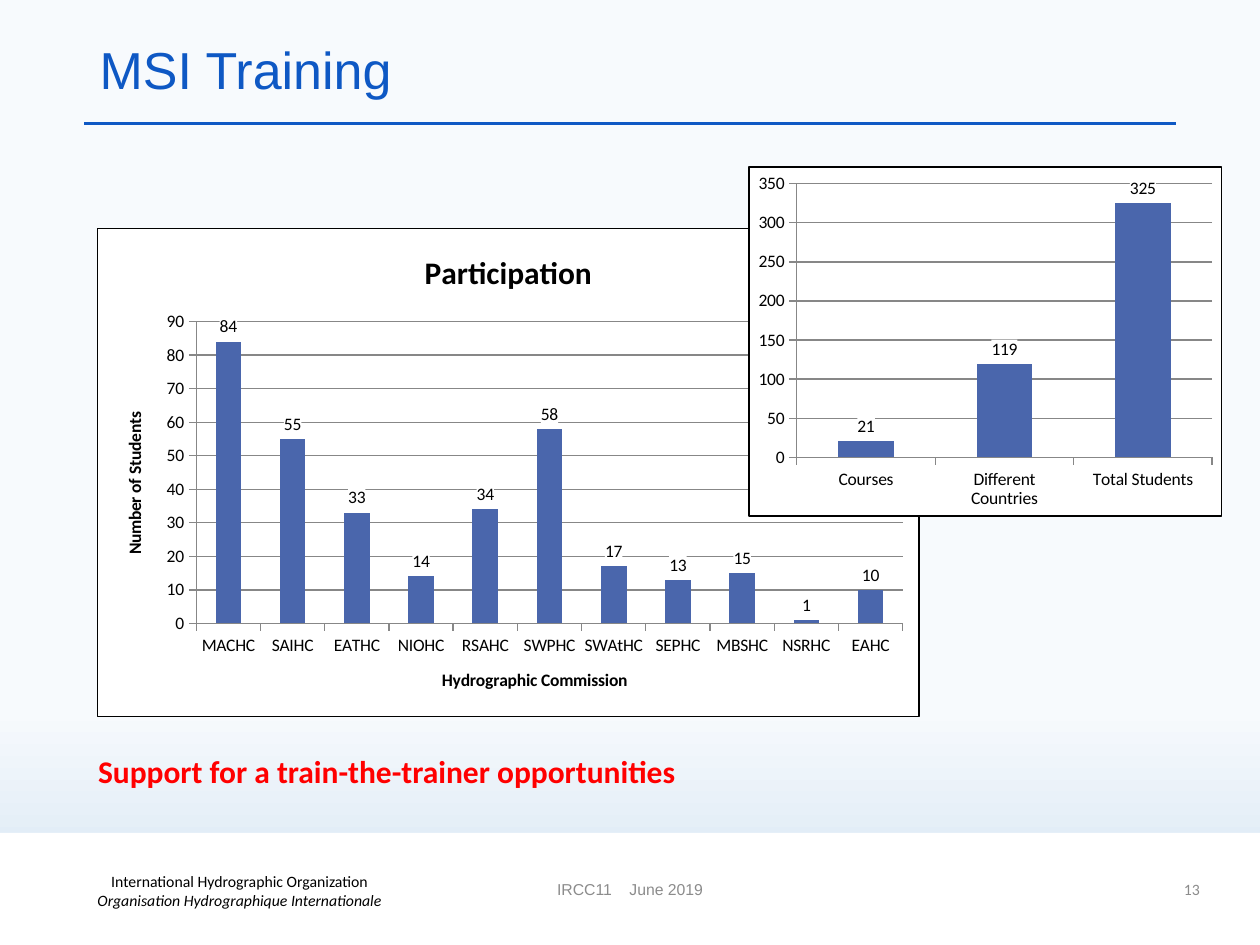
from lxml import etree
from pptx import Presentation
from pptx.chart.data import CategoryChartData
from pptx.dml.color import RGBColor
from pptx.enum.chart import XL_CHART_TYPE, XL_LABEL_POSITION, XL_TICK_MARK
from pptx.enum.shapes import MSO_CONNECTOR, MSO_SHAPE
from pptx.enum.text import MSO_ANCHOR, MSO_AUTO_SIZE, PP_ALIGN
from pptx.oxml import parse_xml
from pptx.oxml.ns import nsdecls, qn
from pptx.util import Inches, Pt

BLUE = RGBColor(0x0E, 0x58, 0xC4)
BAR = RGBColor(0x4A, 0x66, 0xAC)
RED = RGBColor(0xFF, 0x00, 0x00)
GREY = RGBColor(0x8C, 0x8C, 0x8C)
GRID = RGBColor(0x87, 0x87, 0x87)
BLACK = RGBColor(0x00, 0x00, 0x00)
WHITE = RGBColor(0xFF, 0xFF, 0xFF)
SKY_TOP = RGBColor(0xF7, 0xFA, 0xFD)
SKY_BOTTOM = RGBColor(0xD0, 0xE2, 0xF1)

# Content
TITLE = "MSI Training"
MESSAGE = "Support for a train-the-trainer opportunities"
ORGANIZATION = ("International Hydrographic Organization",
                "Organisation Hydrographique Internationale")
EVENT = "IRCC11    June 2019"
PAGE = "13"

CHARTS = [
    {"box": (0.77, 1.81, 6.53, 3.88), "title": "Participation",
     "x_title": "Hydrographic Commission", "y_title": "Number of Students",
     "max": 90, "step": 10,
     "data": {"MACHC": 84, "SAIHC": 55, "EATHC": 33, "NIOHC": 14,
              "RSAHC": 34, "SWPHC": 58, "SWAtHC": 17, "SEPHC": 13,
              "MBSHC": 15, "NSRHC": 1, "EAHC": 10}},
    {"box": (5.94, 1.32, 3.76, 2.78), "max": 350, "step": 50,
     "data": {"Courses": 21, "Different Countries": 119,
              "Total Students": 325}},
]


def set_font(font, size, color, name="Calibri", bold=False, italic=False):
    font.name, font.size = name, Pt(size)
    font.bold, font.italic = bold, italic
    font.color.rgb = color


def add_text(s, box, text, size, color, align=PP_ALIGN.LEFT,
             anchor=MSO_ANCHOR.MIDDLE, **style):
    tf = s.shapes.add_textbox(*map(Inches, box)).text_frame
    tf.word_wrap = True
    tf.vertical_anchor = anchor
    p = tf.paragraphs[0]
    p.alignment = align
    r = p.add_run()
    r.text = text
    set_font(r.font, size, color, **style)
    return p


def white_box(line):
    return parse_xml(
        f'<c:spPr {nsdecls("c", "a")}><a:solidFill><a:srgbClr val="{WHITE}"/>'
        f'</a:solidFill>{line}</c:spPr>')


def add_heading(holder, text, size):
    r = holder.text_frame.paragraphs[0].add_run()
    r.text = text
    set_font(r.font, size, BLACK, bold=True)


def add_columns(s, spec_):
    data = CategoryChartData()
    data.categories = list(spec_["data"])
    data.add_series("Series 1", list(spec_["data"].values()))
    chart = s.shapes.add_chart(XL_CHART_TYPE.COLUMN_CLUSTERED,
                               *map(Inches, spec_["box"]), data).chart
    set_font(chart.font, 10, BLACK)
    chart.has_legend = False
    chart.has_title = "title" in spec_
    if chart.has_title:
        add_heading(chart.chart_title, spec_["title"], 18)

    # White chart area with a thin black border
    border = (f'<a:ln w="{Pt(0.75)}"><a:solidFill><a:srgbClr val="{BLACK}"/>'
              '</a:solidFill></a:ln>')
    chart.element.find(qn("c:chart")).addnext(white_box(border))

    # Axes
    for axis, key in ((chart.category_axis, "x_title"),
                      (chart.value_axis, "y_title")):
        axis.major_tick_mark = XL_TICK_MARK.OUTSIDE
        axis.minor_tick_mark = XL_TICK_MARK.NONE
        axis.format.line.color.rgb = GRID
        axis.format.line.width = Pt(0.75)
        if key in spec_:
            add_heading(axis.axis_title, spec_[key], 10)
    values = chart.value_axis
    values.minimum_scale, values.maximum_scale = 0, spec_["max"]
    values.major_unit = spec_["step"]
    values.has_major_gridlines = True
    values.major_gridlines.format.line.color.rgb = GRID
    values.major_gridlines.format.line.width = Pt(0.75)

    # Bars and their labels
    plot = chart.plots[0]
    plot.gap_width = 150
    plot.vary_by_categories = False
    series = plot.series[0]
    series.format.fill.solid()
    series.format.fill.fore_color.rgb = BAR
    labels = series.data_labels
    labels.show_value = True
    labels.position = XL_LABEL_POSITION.OUTSIDE_END
    set_font(labels.font, 10, BLACK)
    label_text = series.format.fill and chart.element.find(
        f'.//{qn("c:dLbls")}/{qn("c:txPr")}')
    label_text.addprevious(white_box("<a:ln><a:noFill/></a:ln>"))


def main():
    prs = Presentation()
    prs.slide_width, prs.slide_height = Inches(10), Inches(7.5)
    s = prs.slides.add_slide(prs.slide_layouts[5])

    # Background, fading downwards
    fill = s.background.fill
    fill.gradient()
    fill.gradient_angle = 270
    for stop, position, color in zip(fill.gradient_stops, (0.75, 1),
                                     (SKY_TOP, SKY_BOTTOM)):
        stop.position = position
        stop.color.rgb = color

    # Rule under the title and white footer band
    rule = s.shapes.add_connector(MSO_CONNECTOR.STRAIGHT, Inches(0.67),
                                  Inches(0.98), Inches(9.33), Inches(0.98))
    rule.line.color.rgb = BLUE
    rule.line.width = Pt(2.25)
    etree.SubElement(rule._element.spPr, qn("a:effectLst"))
    band = s.shapes.add_shape(MSO_SHAPE.RECTANGLE, 0, Inches(6.61),
                              Inches(10), Inches(0.92))
    band.shadow.inherit = False
    band.fill.solid()
    band.fill.fore_color.rgb = WHITE
    band.line.fill.background()

    # Title
    title = s.shapes.title
    title.left, title.top = Inches(0.69), Inches(0.28)
    title.width, title.height = Inches(8.62), Inches(0.59)
    tf = title.text_frame
    tf.auto_size = MSO_AUTO_SIZE.NONE
    tf.vertical_anchor = MSO_ANCHOR.MIDDLE
    p = tf.paragraphs[0]
    p.alignment, p.line_spacing = PP_ALIGN.LEFT, 0.9
    r = p.add_run()
    r.text = TITLE
    set_font(r.font, 29.7, BLUE, "Arial")

    # Footer
    p = add_text(s, (0.21, 6.87, 3.38, 0.4), ORGANIZATION[0], 9, BLACK,
                 PP_ALIGN.CENTER)
    p.add_line_break()
    r = p.add_run()
    r.text = ORGANIZATION[1]
    set_font(r.font, 9, BLACK, italic=True)
    add_text(s, (7.37, 6.86, 2.25, 0.4), PAGE, 9, GREY, PP_ALIGN.RIGHT)
    add_text(s, (3.31, 6.86, 3.38, 0.4), EVENT, 9, GREY, PP_ALIGN.CENTER,
             name="Arial")

    # Charts and message
    for chart in CHARTS:
        add_columns(s, chart)
    add_text(s, (0.68, 5.92, 9.21, 0.4), MESSAGE, 18, RED,
             anchor=MSO_ANCHOR.TOP, bold=True)

    prs.save("out.pptx")


if __name__ == "__main__":
    main()
